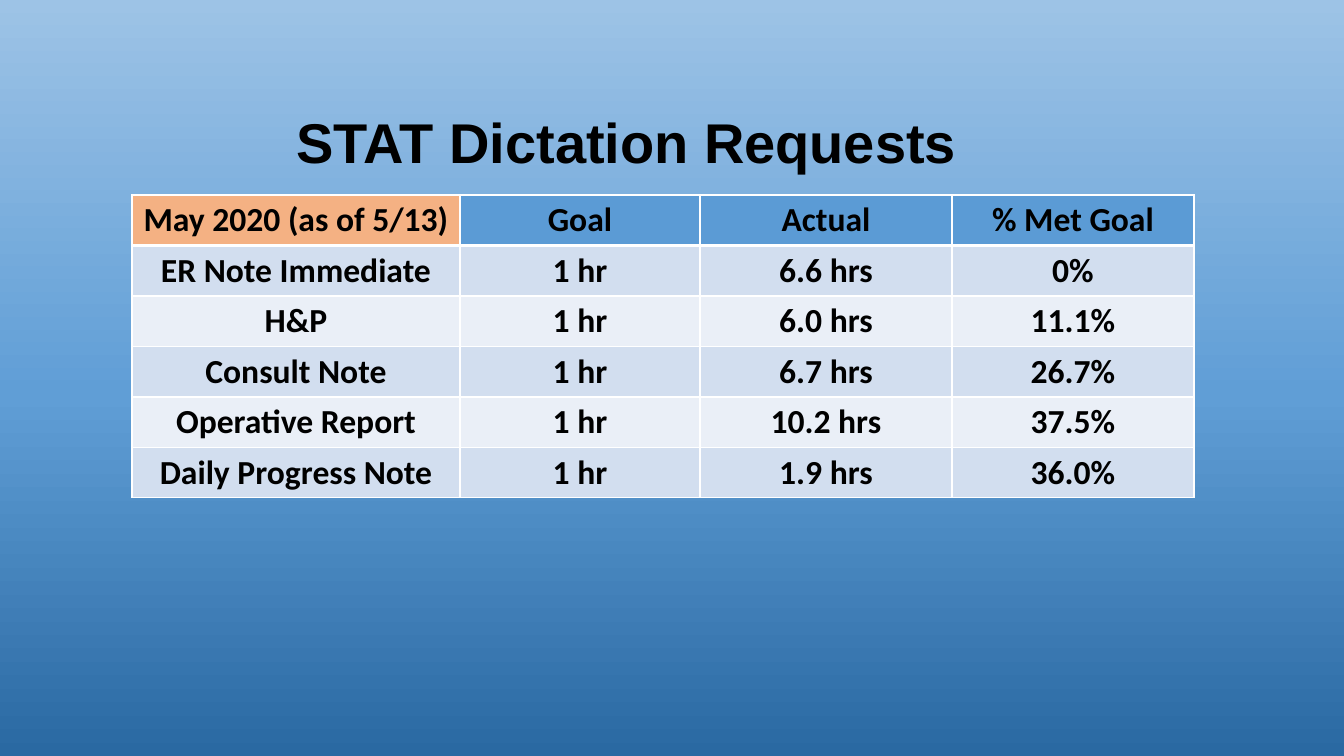
from copy import deepcopy
from dataclasses import dataclass

from lxml.etree import SubElement
from pptx import Presentation
from pptx.dml.color import RGBColor
from pptx.enum.text import MSO_ANCHOR, MSO_AUTO_SIZE, PP_ALIGN
from pptx.oxml.ns import qn
from pptx.util import Pt

EMU_PER_PX = 12192000 / 1344


@dataclass(frozen=True)
class Theme:
    text: str = "000000"
    border: str = "FFFFFF"
    header: str = "5B9BD5"
    period: str = "F4B183"
    bands: tuple = ("D2DEEF", "EAEFF7")
    background: tuple = ((0, "2A69A2"), (0.48, "609ED6"), (1, "9DC3E6"))
    title_font: str = "Arial"
    table_font: str = "Calibri"
    title_size: int = 40
    table_size: int = 24


THEME = Theme()

ROWS = (
    ("May 2020 (as of 5/13)", "Goal", "Actual", "% Met Goal"),
    ("ER Note Immediate", "1 hr", "6.6 hrs", "0%"),
    ("H&P", "1 hr", "6.0 hrs", "11.1%"),
    ("Consult Note", "1 hr", "6.7 hrs", "26.7%"),
    ("Operative Report", "1 hr", "10.2 hrs", "37.5%"),
    ("Daily Progress Note", "1 hr", "1.9 hrs", "36.0%"),
)
COLUMN_WIDTHS = (328, 240, 252, 242)


def px(length):
    return round(length * EMU_PER_PX)


def write_text(frame, text, *, font, size, color=THEME.text, bold=True,
               align=PP_ALIGN.LEFT):
    paragraph = frame.paragraphs[0]
    paragraph.alignment = align
    run = paragraph.add_run()
    run.text = text
    run.font.name = font
    run.font.size = Pt(size)
    run.font.bold = bold
    run.font.color.rgb = RGBColor.from_string(color)


def paint_background(slide):
    fill = slide.background.fill
    fill.gradient()
    fill.gradient_angle = 90
    stop_list = next(slide.element.iter(qn("a:gsLst")))
    stop_list.append(deepcopy(stop_list[-1]))
    for stop, (position, color) in zip(fill.gradient_stops, THEME.background):
        stop.position = position
        stop.color.rgb = RGBColor.from_string(color)


def add_title(slide, left, top, width, height):
    title = slide.shapes.title
    title.left, title.top = px(left), px(top)
    title.width, title.height = px(width), px(height)
    frame = title.text_frame
    frame.word_wrap = True
    frame.auto_size = MSO_AUTO_SIZE.SHAPE_TO_FIT_TEXT
    frame.vertical_anchor = MSO_ANCHOR.MIDDLE
    write_text(frame, "STAT Dictation Requests", font=THEME.title_font,
               size=THEME.title_size)


def set_borders(cell, **widths):
    properties = cell._tc.get_or_add_tcPr()
    for side in "LRTB":
        line = SubElement(properties, qn(f"a:ln{side}"),
                          w=str(Pt(widths.get(side, 1))))
        color = SubElement(SubElement(line, qn("a:solidFill")), qn("a:srgbClr"))
        color.set("val", THEME.border)


def cell_color(row, column):
    if row == 0:
        return THEME.header if column else THEME.period
    return THEME.bands[(row - 1) % 2]


def add_results_table(slide, left, top, width, height):
    table = slide.shapes.add_table(len(ROWS), len(COLUMN_WIDTHS), px(left), px(top),
                                   px(width), px(height)).table
    for column, column_width in zip(table.columns, COLUMN_WIDTHS):
        column.width = px(column_width)
    for row, values in enumerate(ROWS):
        for column, value in enumerate(values):
            cell = table.cell(row, column)
            cell.margin_left = cell.margin_right = px(7)
            cell.margin_top = cell.margin_bottom = px(4)
            cell.vertical_anchor = MSO_ANCHOR.MIDDLE
            # The line under the header row is heavier
            set_borders(cell, B=3 if row == 0 else 1, T=3 if row == 1 else 1)
            cell.fill.solid()
            cell.fill.fore_color.rgb = RGBColor.from_string(cell_color(row, column))
            write_text(cell.text_frame, value, font=THEME.table_font,
                       size=THEME.table_size, align=PP_ALIGN.CENTER)


def main():
    presentation = Presentation()
    presentation.slide_width, presentation.slide_height = px(1344), px(756)
    slide = presentation.slides.add_slide(
        presentation.slide_layouts.get_by_name("Title Only"))
    paint_background(slide)
    add_title(slide, 286, 102, 722, 78)
    add_results_table(slide, 132, 195, sum(COLUMN_WIDTHS), 303)
    presentation.save("out.pptx")


if __name__ == "__main__":
    main()
